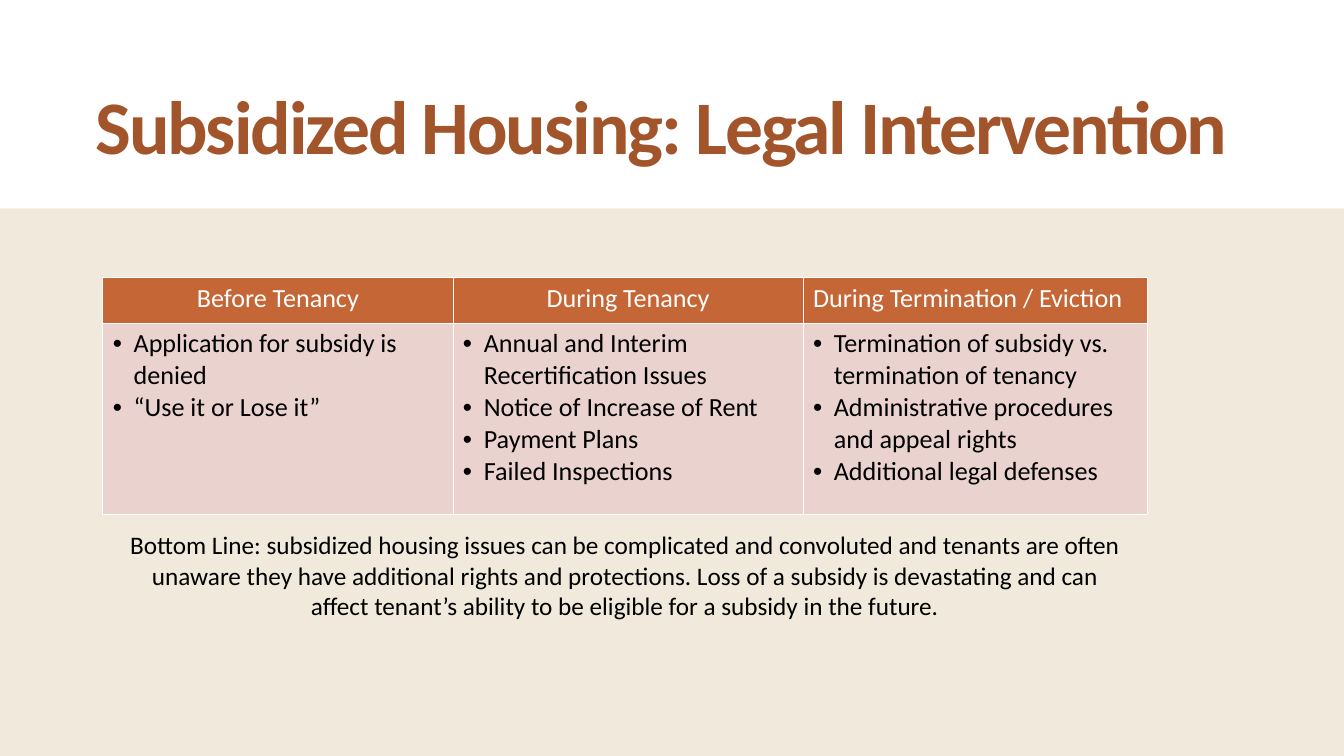
import dataclasses
import typing

import lxml.etree
import pptx
import pptx.dml.color
import pptx.enum.shapes
import pptx.enum.text
import pptx.oxml.ns
import pptx.util

ALIGN = pptx.enum.text.PP_ALIGN
ANCHOR = pptx.enum.text.MSO_ANCHOR


@dataclasses.dataclass(frozen=True)
class Theme:
    font: str = "Calibri"
    rust: str = "A2542B"
    clay: str = "C56637"
    rose: str = "EAD3CE"
    sand: str = "F0E9DC"
    white: str = "FFFFFF"
    black: str = "000000"
    title: int = 81
    cell: int = 28
    note: int = 27


@dataclasses.dataclass(frozen=True)
class Stage:
    head: str
    points: tuple[str, ...]
    width: float
    align: typing.Any = ALIGN.CENTER


class Box(typing.NamedTuple):
    """Place on a grid of 100 columns and 100 rows."""
    left: float
    top: float
    width: float
    height: float


THEME = Theme()
WIDE = pptx.util.Inches(20)
HIGH = pptx.util.Inches(11.25)
PAD = pptx.util.Inches(0.15)
INDENT = pptx.util.Inches(0.31)

BAND = Box(0, 27.56, 100, 72.44)
TITLE = Box(4.1, 5.42, 90.25, 23.47)
TABLE = Box(7.65, 36.71, 77.7, 31.28)
NOTE = Box(8.5, 69.42, 75.95, 12.98)
ROWS = (6.04, 25.24)

STAGES = (
    Stage("Before Tenancy",
          ("Application for subsidy is denied", "“Use it or Lose it”"), 26.05),
    Stage("During Tenancy",
          ("Annual and Interim Recertification Issues",
           "Notice of Increase of Rent", "Payment Plans",
           "Failed Inspections"), 26.05),
    Stage("During Termination / Eviction",
          ("Termination of subsidy vs. termination of tenancy",
           "Administrative procedures and appeal rights",
           "Additional legal defenses"), 25.6, ALIGN.LEFT),
)
CLOSE = ("Bottom Line: subsidized housing issues can be complicated and "
         "convoluted and tenants are often unaware they have additional "
         "rights and protections. Loss of a subsidy is devastating and can "
         "affect tenant’s ability to be eligible for a subsidy in the future.")


def across(cols: float) -> int:
    return round(WIDE * cols / 100)


def down(rows: float) -> int:
    return round(HIGH * rows / 100)


def place(box: Box) -> tuple[int, int, int, int]:
    return across(box.left), down(box.top), across(box.width), down(box.height)


def tint(code: str) -> pptx.dml.color.RGBColor:
    return pptx.dml.color.RGBColor.from_string(code)


def add(parent: typing.Any, tag: str, **attrs: str) -> typing.Any:
    return lxml.etree.SubElement(parent, pptx.oxml.ns.qn(tag), attrs)


def write(frame: typing.Any, lines: typing.Sequence[str], *, size: float,
          color: str, align: typing.Any = ALIGN.LEFT, bold: bool = False,
          bullet: bool = False, track: float = 0, lead: float = 1) -> None:
    frame.word_wrap = True
    for i, line in enumerate(lines):
        para = frame.add_paragraph() if i else frame.paragraphs[0]
        para.alignment = align
        para.line_spacing = lead
        run = para.add_run()
        run.text = line
        run.font.name = THEME.font
        run.font.size = pptx.util.Pt(size)
        run.font.bold = bold
        run.font.color.rgb = tint(color)
        if track:
            run.font._element.set("spc", str(round(track * 100)))
        if bullet:
            props = para._p.get_or_add_pPr()
            props.set("marL", str(INDENT))
            props.set("indent", str(-INDENT))
            add(props, "a:buFont", typeface="Arial")
            add(props, "a:buChar", char="•")


def edge(cell: typing.Any) -> None:
    """Rule all four sides; borders must come before the fill."""
    props = cell._tc.get_or_add_tcPr()
    for i, side in enumerate("LRTB"):
        line = add(props, f"a:ln{side}", w=str(pptx.util.Pt(1)))
        add(add(line, "a:solidFill"), "a:srgbClr", val=THEME.white)
        props.insert(i, line)


def style(cell: typing.Any, fill: str) -> None:
    cell.fill.solid()
    cell.fill.fore_color.rgb = tint(fill)
    cell.margin_left = cell.margin_right = PAD
    cell.margin_top = cell.margin_bottom = pptx.util.Inches(0.07)
    edge(cell)


def draw_band(slide: typing.Any) -> None:
    band = slide.shapes.add_shape(
        pptx.enum.shapes.MSO_SHAPE.RECTANGLE, *place(BAND))
    band.shadow.inherit = False
    band.fill.solid()
    band.fill.fore_color.rgb = tint(THEME.sand)
    band.line.fill.background()
    slide.shapes._spTree.insert(2, band._element)


def draw_title(slide: typing.Any) -> None:
    title = slide.shapes.title
    title.left, title.top, title.width, title.height = place(TITLE)
    title.text_frame.vertical_anchor = ANCHOR.MIDDLE
    title.text_frame.auto_size = pptx.enum.text.MSO_AUTO_SIZE.NONE
    write(title.text_frame, ["Subsidized Housing: Legal Intervention"],
          size=THEME.title, color=THEME.rust, align=ALIGN.CENTER,
          bold=True, track=-2.2, lead=0.9)


def draw_table(slide: typing.Any) -> None:
    table = slide.shapes.add_table(
        len(ROWS), len(STAGES), *place(TABLE)).table
    for row, height in zip(table.rows, ROWS):
        row.height = down(height)
    for i, stage in enumerate(STAGES):
        table.columns[i].width = across(stage.width)
        head, body = table.cell(0, i), table.cell(1, i)
        style(head, THEME.clay)
        style(body, THEME.rose)
        write(head.text_frame, [stage.head], size=THEME.cell,
              color=THEME.white, align=stage.align)
        write(body.text_frame, stage.points, size=THEME.cell,
              color=THEME.black, bullet=True)


def draw_note(slide: typing.Any) -> None:
    frame = slide.shapes.add_textbox(*place(NOTE)).text_frame
    frame.margin_left = frame.margin_right = PAD
    frame.margin_top = frame.margin_bottom = pptx.util.Inches(0.07)
    write(frame, [CLOSE], size=THEME.note, color=THEME.black,
          align=ALIGN.CENTER)


def main() -> None:
    deck = pptx.Presentation()
    deck.slide_width, deck.slide_height = WIDE, HIGH
    slide = deck.slides.add_slide(deck.slide_layouts.get_by_name("Title Only"))
    slide.background.fill.solid()
    slide.background.fill.fore_color.rgb = tint(THEME.white)
    draw_band(slide)
    draw_title(slide)
    draw_table(slide)
    draw_note(slide)
    deck.save("out.pptx")


if __name__ == "__main__":
    main()
